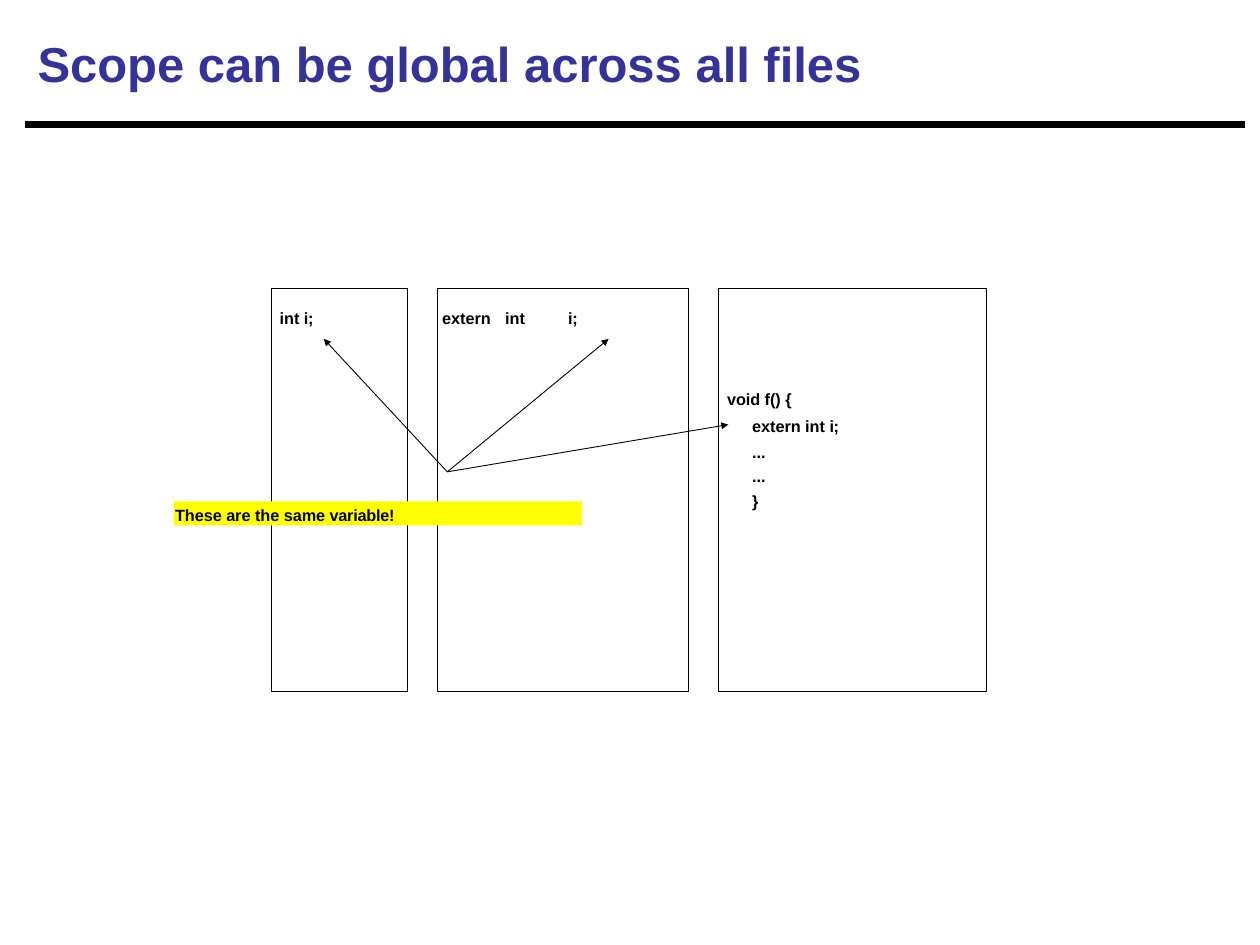
from dataclasses import dataclass

from lxml.etree import SubElement as Sub
from pptx import Presentation
from pptx.dml.color import RGBColor as RGB
from pptx.enum.shapes import MSO_CONNECTOR as Link, MSO_SHAPE as Kind
from pptx.enum.text import MSO_ANCHOR as Anchor, MSO_AUTO_SIZE as Fit
from pptx.oxml.ns import qn
from pptx.util import Inches, Pt

BLACK, BLUE, YELLOW = "000000", "333399", "FFFF00"
FONT = "Arial"
THIN = 0.37
LOW = -25000  # code is set as subscript, in 1/1000 percent

deck = Presentation()
deck.slide_width, deck.slide_height = Inches(10), Inches(7.5)
slide = deck.slides.add_slide(deck.slide_layouts[6])
UNIT = deck.slide_width / 100  # square grid: 100 columns by 75 rows


@dataclass
class Run:
    text: str
    gap: float = 0  # letter spacing in points


@dataclass
class Para:
    runs: list[Run]
    lead: float = 0  # exact line height in points
    above: float = 0
    left: float = 0  # columns
    first: float = 0  # columns
    tabs: tuple[float, ...] = ()


@dataclass
class Note:
    col: float
    row: float
    cols: float
    rows: float
    top: float  # inset, rows
    paras: list[Para]
    fill: str = ""


def span(count: float) -> int:
    return round(count * UNIT)


def paint(target, color: str) -> None:
    """Give a fill or a font colour a solid hex colour."""
    if hasattr(target, "solid"):
        target.solid()
        target = target.fore_color
    target.rgb = RGB.from_string(color)


def write(par, run: Run, size: float, color: str, base: int = 0) -> None:
    bit = par.add_run()
    bit.text = run.text
    font = bit.font
    font.name, font.size, font.bold = FONT, Pt(size), True
    paint(font.color, color)
    props = bit._r.get_or_add_rPr()
    if base:
        props.set("baseline", str(base))
    if run.gap:
        props.set("spc", str(round(run.gap * 100)))


def shape_par(par, para: Para) -> None:
    """Set spacing, indents and tab stops."""
    if para.lead:
        par.line_spacing = Pt(para.lead)
    par.space_before = Pt(para.above)
    props = par._p.get_or_add_pPr()
    props.set("marL", str(span(para.left)))
    props.set("indent", str(span(para.first)))
    if para.tabs:
        stops = Sub(props, qn("a:tabLst"))
        for tab in para.tabs:
            Sub(stops, qn("a:tab"), pos=str(span(tab)), algn="l")


def draw_note(note: Note) -> None:
    place = [span(n) for n in (note.col, note.row, note.cols, note.rows)]
    if note.fill:
        box = slide.shapes.add_shape(Kind.RECTANGLE, *place)
        box.shadow.inherit = False
        paint(box.fill, note.fill)
        box.line.fill.background()
    else:
        box = slide.shapes.add_textbox(*place)
    frame = box.text_frame
    frame.word_wrap, frame.auto_size = True, Fit.SHAPE_TO_FIT_TEXT
    frame.vertical_anchor = Anchor.TOP
    frame.margin_left = frame.margin_right = frame.margin_bottom = 0
    frame.margin_top = span(note.top)
    for i, para in enumerate(note.paras):
        par = frame.add_paragraph() if i else frame.paragraphs[0]
        par.alignment = 1
        shape_par(par, para)
        for run in para.runs:
            write(par, run, 16, BLACK, LOW)


def draw_file(col: float, cols: float) -> None:
    box = slide.shapes.add_shape(
        Kind.RECTANGLE, span(col), span(22.9), span(cols), span(32))
    box.shadow.inherit = False
    box.fill.background()
    paint(box.line.fill, BLACK)
    box.line.width = Pt(THIN)


def draw_line(start: tuple, end: tuple, width: float, head: bool = False) -> None:
    line = slide.shapes.add_connector(
        Link.STRAIGHT, *(span(n) for n in (*start, *end)))
    paint(line.line.fill, BLACK)
    line.line.width = Pt(width)
    if head:
        Sub(line.line._get_or_add_ln(), qn("a:tailEnd"),
            type="triangle", w="sm", len="sm")
    Sub(line._element.spPr, qn("a:effectLst"))


def draw_title(text: str) -> None:
    box = slide.shapes.add_textbox(span(2), span(0.8), span(96.7), span(8.4))
    frame = box.text_frame
    frame.word_wrap, frame.vertical_anchor = True, Anchor.MIDDLE
    write(frame.paragraphs[0], Run(text), 28, BLUE)


NOTES = [
    Note(22.2, 22.9, 7.7, 2.8, 0.1, [
        Para([Run("int "), Run("i;", -0.2)], above=1)]),
    Note(35.1, 22.9, 17.3, 2.8, 0.1, [
        Para([Run("extern\tint\t"), Run("i;", -0.2)],
             above=1, tabs=(4.8, 7.9))]),
    Note(57.7, 30.2, 19.5, 10.4, 0.3, [
        Para([Run("void f() "), Run("{", -0.5)], 13.9, 1.9, 2, -2),
        Para([Run("\t", -0.5), Run("extern int "), Run("i;", -0.2)],
             13.9, 1.9, 2, -2),
        Para([Run("...")], 14.2, 0.4, 2),
        Para([Run("...")], 13.9, 0, 2),
        Para([Run("}", -0.5)], 14.2, 0, 2)]),
    Note(13.8, 39.8, 32.4, 1.9, 0, [
        Para([Run("These are the same "), Run("variable!", -0.1)],
             13.2, left=0.1)], YELLOW),
]

draw_line((2, 9.9), (98.8, 9.9), 3.75)
draw_title("Scope can be global across all files")

col = 21.5
for cols in (10.8, 19.9, 21.3):
    draw_file(col, cols)
    col += cols + 2.4

for note in NOTES:
    draw_note(note)

for tip in ((25.7, 26.9), (48.3, 26.9), (57.8, 33.7)):
    draw_line((35.5, 37.45), tip, 0.5, head=True)

deck.save("out.pptx")
